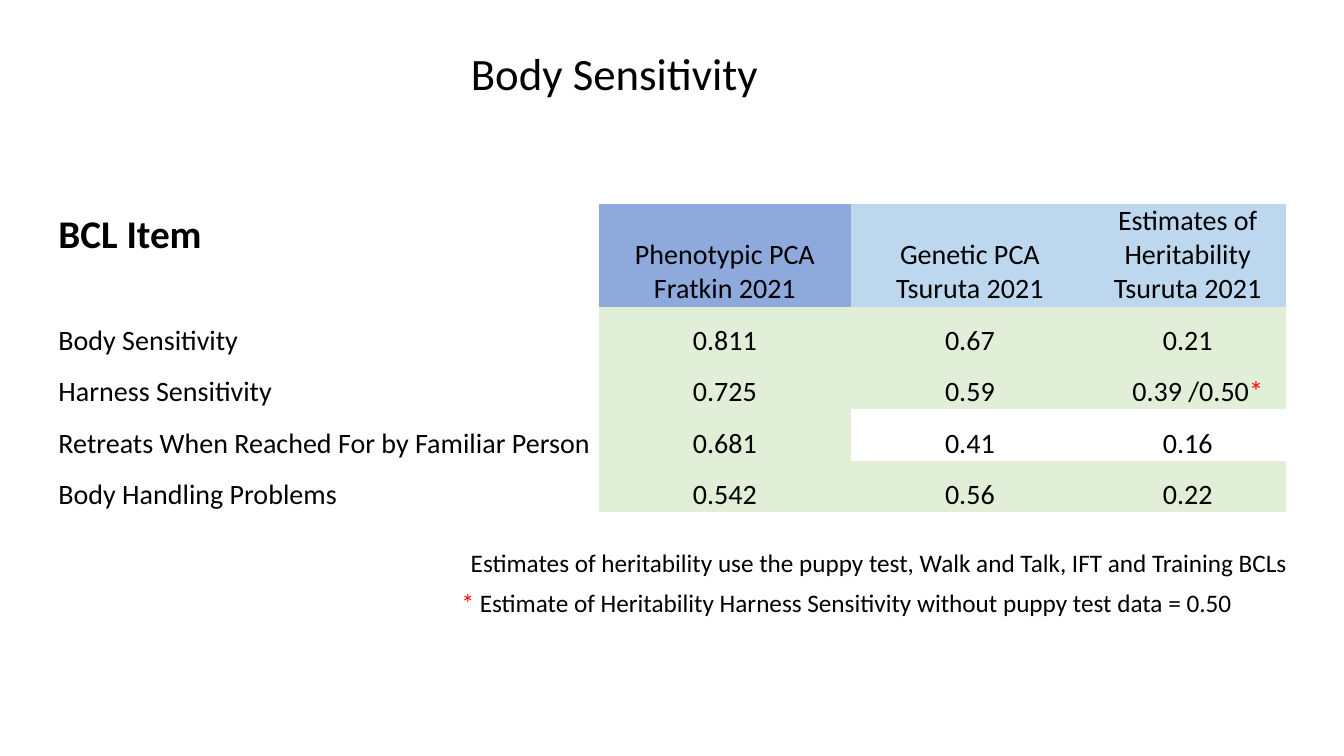
import pptx
import pptx.util
import pptx.dml.color
import pptx.enum.text
import pptx.oxml
import pptx.oxml.ns
from dataclasses import dataclass

TITLE = "Body Sensitivity"
HEADINGS = [
    "BCL Item",
    "Phenotypic PCA\nFratkin 2021",
    "Genetic PCA\nTsuruta 2021",
    "Estimates of Heritability\nTsuruta 2021",
]
ITEMS = [
    ("Body Sensitivity", "0.811", "0.67", "0.21"),
    ("Harness Sensitivity", "0.725", "0.59", "0.39 /0.50*"),
    ("Retreats When Reached For by Familiar Person", "0.681", "0.41", "0.16"),
    ("Body Handling Problems", "0.542", "0.56", "0.22"),
]
NOTES = [
    (4.57, 8.39, "Estimates of heritability use the puppy test, "
                 "Walk and Talk, IFT and Training BCLs"),
    (4.48, 7.93, "* Estimate of Heritability Harness Sensitivity "
                 "without puppy test data = 0.50"),
]


@dataclass(frozen=True)
class Theme:
    font: str = "Calibri"
    ink: str = "000000"
    star: str = "FF0000"
    phenotypic: str = "8EA9DB"
    genetic: str = "BDD7EE"
    strong: str = "E1EFD8"
    title_size: int = 32
    corner_size: int = 28
    table_size: int = 20
    note_size: int = 18


THEME = Theme()
HEADING_FILLS = [None, THEME.phenotypic, THEME.genetic, THEME.genetic]
STRONG_LOADING = 0.5
GENETIC_COLUMN = 2

SLIDE_SIZE = (13.33, 7.5)
TITLE_BOX = (4.57, 0.4, 3.08, 0.64)
TABLE_LEFT, TABLE_TOP = 0.58, 2.02
COLUMNS = [5.36, 2.5, 2.36, 1.96]
HEADING_ROW, ITEM_ROW = 1.02, 0.51
NOTES_TOP, NOTE_HEIGHT = 5.38, 0.4
CORNER_LIFT = 0.47
STAR_INDENT = 0.2

Inches = pptx.util.Inches
Color = pptx.dml.color.RGBColor.from_string
Align = pptx.enum.text.PP_ALIGN
Anchor = pptx.enum.text.MSO_ANCHOR


def write(frame, text, size, bold=False, align=Align.LEFT, spacing=1.0):
    """Fill a frame line by line, with each asterisk as a red run."""
    frame.text = text
    for paragraph, line in zip(frame.paragraphs, text.split("\n")):
        paragraph.text = ""
        paragraph.alignment = align
        paragraph.line_spacing = spacing
        for part in filter(None, line.partition("*")):
            run = paragraph.add_run()
            run.text = part
            run.font.name = THEME.font
            run.font.size = pptx.util.Pt(size)
            run.font.bold = bold
            run.font.color.rgb = Color(THEME.star if part == "*" else THEME.ink)


def paint(cell, color):
    """Remove the cell's borders and give it a fill, or none."""
    properties = cell._tc.get_or_add_tcPr()
    for edge in ("lnL", "lnR", "lnT", "lnB"):
        border = pptx.oxml.parse_xml(
            f'<a:{edge} {pptx.oxml.ns.nsdecls("a")} w="0"><a:noFill/></a:{edge}>')
        properties.append(border)
    if color:
        cell.fill.solid()
        cell.fill.fore_color.rgb = Color(color)
    else:
        cell.fill.background()


def item_fill(item, column):
    """Shade phenotypic loadings always, genetic columns when the loading is strong."""
    if column == 0:
        return None
    if column < GENETIC_COLUMN or float(item[GENETIC_COLUMN]) >= STRONG_LOADING:
        return THEME.strong
    return None


def add_title(slide):
    title = slide.shapes.title
    title.left, title.top, title.width, title.height = map(Inches, TITLE_BOX)
    title.text_frame.vertical_anchor = Anchor.TOP
    title.text_frame.auto_size = pptx.enum.text.MSO_AUTO_SIZE.NONE
    write(title.text_frame, TITLE, THEME.title_size)


def add_loadings(slide):
    heights = [HEADING_ROW] + [ITEM_ROW] * len(ITEMS)
    table = slide.shapes.add_table(
        len(heights), len(COLUMNS), Inches(TABLE_LEFT), Inches(TABLE_TOP),
        Inches(sum(COLUMNS)), Inches(sum(heights))).table
    table.first_row = table.horz_banding = False
    for column, width in zip(table.columns, COLUMNS):
        column.width = Inches(width)
    for row, height in zip(table.rows, heights):
        row.height = Inches(height)

    for r, texts in enumerate([HEADINGS] + ITEMS):
        for c, text in enumerate(texts):
            cell = table.cell(r, c)
            corner = r == 0 and c == 0
            cell.vertical_anchor = Anchor.BOTTOM
            cell.margin_right = cell.margin_top = 0
            cell.margin_left = Inches(STAR_INDENT if "*" in text else 0)
            cell.margin_bottom = Inches(CORNER_LIFT if corner else 0)
            paint(cell, HEADING_FILLS[c] if r == 0 else item_fill(texts, c))
            write(cell.text_frame, text,
                  THEME.corner_size if corner else THEME.table_size,
                  bold=corner,
                  align=Align.CENTER if c else Align.LEFT,
                  spacing=1.5 if r else 1.0)


def add_notes(slide):
    for i, (left, width, text) in enumerate(NOTES):
        note = slide.shapes.add_textbox(
            Inches(left), Inches(NOTES_TOP + i * NOTE_HEIGHT),
            Inches(width), Inches(NOTE_HEIGHT))
        note.text_frame.word_wrap = True
        write(note.text_frame, text, THEME.note_size)


def main():
    deck = pptx.Presentation()
    deck.slide_width, deck.slide_height = map(Inches, SLIDE_SIZE)
    slide = deck.slides.add_slide(deck.slide_layouts.get_by_name("Title Only"))
    add_title(slide)
    add_loadings(slide)
    add_notes(slide)
    deck.save("out.pptx")


if __name__ == "__main__":
    main()
